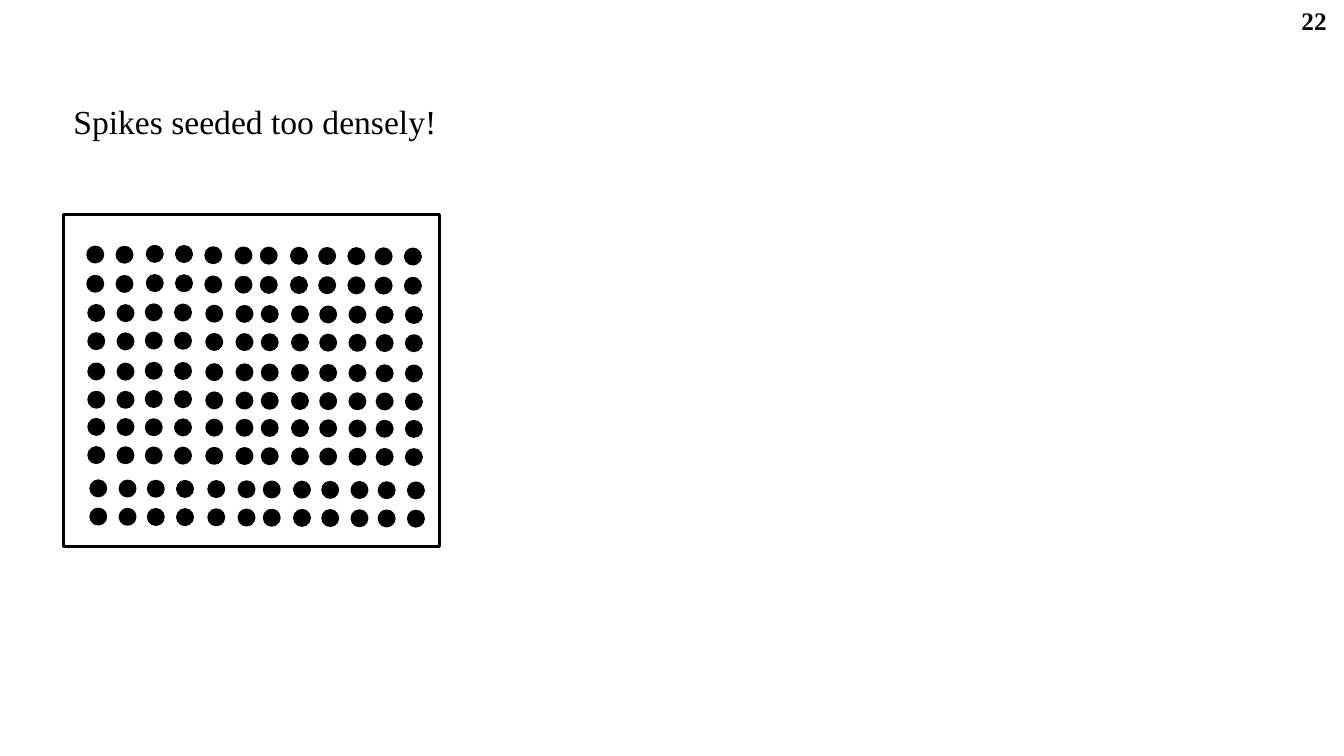
from dataclasses import dataclass

from pptx import Presentation
from pptx.dml.color import RGBColor
from pptx.enum import shapes, text
from pptx.util import Inches, Pt


@dataclass
class Theme:
    ink = RGBColor(0, 0, 0)
    paper = RGBColor(255, 255, 255)
    font = "Times New Roman"
    title = Pt(24)
    number = Pt(18)
    line = Pt(2)


theme = Theme()
deck = Presentation()
deck.slide_width = Inches(13.33)
deck.slide_height = Inches(7.5)
slide = deck.slides.add_slide(deck.slide_layouts[6])


def add_form(kind, left, top, width, height):
    """Add an outlined shape without fill or shadow."""
    form = slide.shapes.add_shape(
        kind, Inches(left), Inches(top), Inches(width), Inches(height))
    form.shadow.inherit = False
    form.fill.background()
    form.line.color.rgb = theme.ink
    form.line.width = theme.line
    return form


def set_text(box, words, size, bold=False):
    frame = box.text_frame
    frame.text = words
    frame.auto_size = text.MSO_AUTO_SIZE.SHAPE_TO_FIT_TEXT
    frame.vertical_anchor = text.MSO_ANCHOR.TOP
    line = frame.paragraphs[0]
    line.alignment = text.PP_ALIGN.LEFT
    font = line.runs[0].font
    font.name = theme.font
    font.size = size
    font.bold = bold
    font.color.rgb = theme.ink


# Field of spikes
add_form(shapes.MSO_SHAPE.RECTANGLE, 0.63, 2.13, 3.73, 3.29)

spike = 0.15
cols = [0.88, 1.17, 1.45, 1.74, 2.05, 2.35, 2.6, 2.9, 3.18, 3.47, 3.74, 4.03]
rows = [2.45, 2.74, 3.03, 3.31, 3.61, 3.89, 4.16, 4.44, 4.77, 5.05]
slope = 0.02 / (len(cols) - 1)

for r, top in enumerate(rows):
    for c, left in enumerate(cols):
        raised = c in (2, 3)
        if r < 2:
            shift = 0.01 if raised else -0.01
        else:
            shift = 0.02 if r > 7 else 0
        lift = 0.01 if raised and r < 6 else 0
        dot = add_form(shapes.MSO_SHAPE.OVAL, left + shift,
                       top + slope * c - lift, spike, spike)
        dot.fill.solid()
        dot.fill.fore_color.rgb = theme.ink

# Title and slide number
title = slide.shapes.add_textbox(
    Inches(0.63), Inches(0.95), Inches(3.84), Inches(0.5))
title.text_frame.word_wrap = False
set_text(title, "Spikes seeded too densely!", theme.title)

number = add_form(shapes.MSO_SHAPE.RECTANGLE, 12.81, 0, 0.46, 0.41)
number.fill.solid()
number.fill.fore_color.rgb = theme.paper
number.line.fill.background()
number.text_frame.word_wrap = True
set_text(number, "22", theme.number, bold=True)

deck.save("out.pptx")
